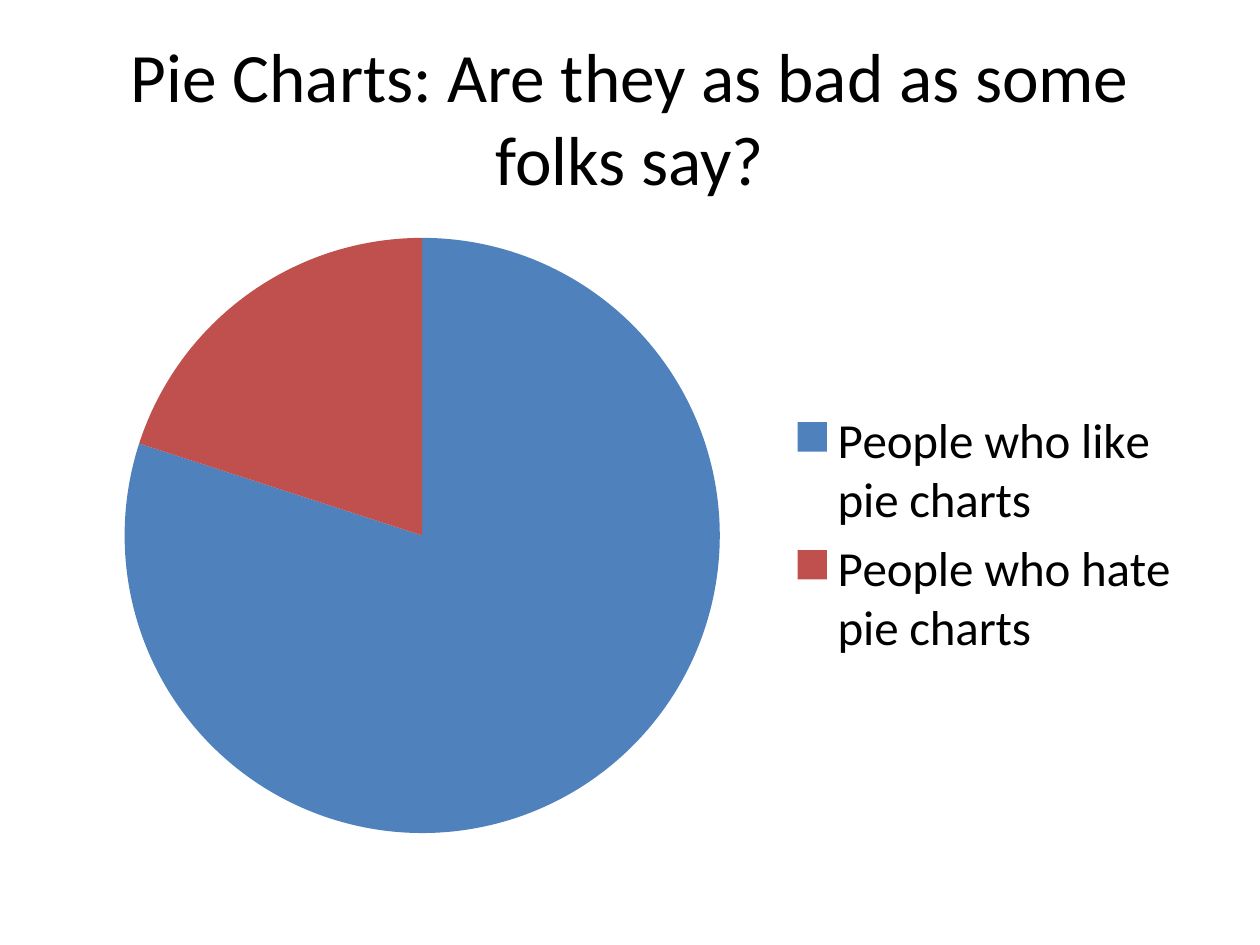
from pptx import Presentation
from pptx import util as u
from pptx.chart.data import CategoryChartData
from pptx.dml.color import RGBColor
from pptx.enum import chart as charts, text

FONT = "Calibri"
BLACK = "000000"
SLICES = {
    "People who like pie charts": (80, "4F81BD"),
    "People who hate pie charts": (20, "C0504D"),
}


def box(left, top, width, height):
    return [u.Pt(value) for value in (left, top, width, height)]


def set_color(color_format, color):
    color_format.rgb = RGBColor.from_string(color)


def set_font(font, size):
    for name, value in {"name": FONT, "size": u.Pt(size)}.items():
        setattr(font, name, value)
    set_color(font.color, BLACK)


def add_title(slide, wording, size, bounds):
    frame = slide.shapes.add_textbox(*bounds).text_frame
    settings = {
        "word_wrap": True,
        "auto_size": text.MSO_AUTO_SIZE.NONE,
        "vertical_anchor": text.MSO_ANCHOR.MIDDLE,
    }
    for name, value in settings.items():
        setattr(frame, name, value)
    paragraph = frame.paragraphs[0]
    paragraph.alignment = text.PP_ALIGN.CENTER
    run = paragraph.add_run()
    run.text = wording
    set_font(run.font, size)


def add_pie(slide, slices, bounds):
    data = CategoryChartData()
    data.categories = list(slices)
    data.add_series("Series 1", [value for value, _ in slices.values()])
    chart = slide.shapes.add_chart(charts.XL_CHART_TYPE.PIE, *bounds, data).chart
    chart.has_title = False
    set_font(chart.font, 10)

    # Slice colours
    plot = chart.plots[0]
    plot.vary_by_categories = True
    for index, (_, color) in enumerate(slices.values()):
        fill = plot.series[0].points[index].format.fill
        fill.solid()
        set_color(fill.fore_color, color)

    # Legend
    chart.has_legend = True
    legend = chart.legend
    legend.position = charts.XL_LEGEND_POSITION.RIGHT
    legend.include_in_layout = False
    set_font(legend.font, 28)


def main():
    presentation = Presentation()
    presentation.slide_width, presentation.slide_height = u.Pt(720), u.Pt(540)
    slide = presentation.slides.add_slide(presentation.slide_layouts[6])

    # Heading above, chart below, on the same margins
    add_title(slide, "Pie Charts: Are they as bad as some folks say?", 39.6,
              box(36, 21.6, 648, 90))
    add_pie(slide, SLICES, box(36, 126, 648, 360))

    presentation.save("out.pptx")


if __name__ == "__main__":
    main()
